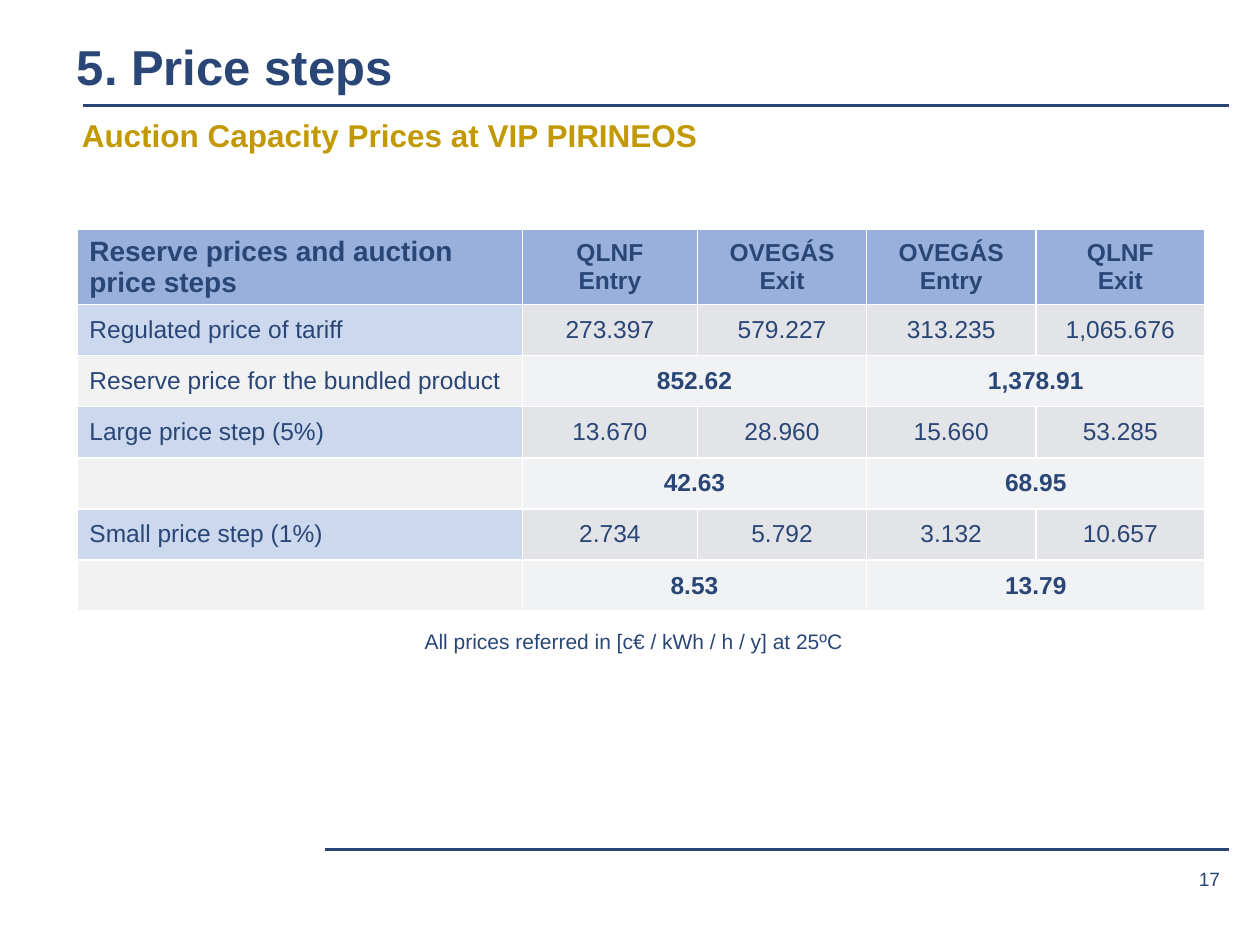
from lxml import etree
from pptx import Presentation
from pptx import util as u
from pptx.dml import color
from pptx.enum import shapes, text
from pptx.oxml import ns

NAVY, GOLD, WHITE = "2A4677", "C29903", "FFFFFF"
LEFT, CENTER = text.PP_ALIGN.LEFT, text.PP_ALIGN.CENTER
RIGHT, JUSTIFY = text.PP_ALIGN.RIGHT, text.PP_ALIGN.JUSTIFY
TOP, MIDDLE = text.MSO_ANCHOR.TOP, text.MSO_ANCHOR.MIDDLE
BOTTOM = text.MSO_ANCHOR.BOTTOM
HEADER = ("98B0DB", "98B0DB")
SPLIT = ("CBD8ED", "E3E4E8")
BUNDLED = ("F2F2F2", "F1F2F4")


def rgb(value):
    return color.RGBColor.from_string(value)


class Deck:
    font = "Arial"
    line_width = u.Pt(1.5)

    def __init__(self, prs):
        self.s = prs.slides.add_slide(prs.slide_layouts[5])

    def fill_text(self, tf, content, size, bold=False, ink=NAVY, align=LEFT):
        tf.text = content
        for p in tf.paragraphs:
            p.alignment = align
            for r in p.runs:
                style = {"name": self.font, "size": u.Pt(size), "bold": bold}
                for key, value in style.items():
                    setattr(r.font, key, value)
                r.font.color.rgb = rgb(ink)

    def frame(self, sp, box, content, size, anchor=TOP, inset=0, wrap=True, **look):
        for key, value in zip(("left", "top", "width", "height"), box):
            setattr(sp, key, u.Cm(value))
        tf = sp.text_frame
        layout = {"word_wrap": wrap, "vertical_anchor": anchor,
                  "auto_size": text.MSO_AUTO_SIZE.NONE,
                  "margin_left": u.Cm(inset), "margin_right": u.Cm(inset),
                  "margin_top": u.Cm(inset / 2), "margin_bottom": u.Cm(inset / 2)}
        for key, value in layout.items():
            setattr(tf, key, value)
        self.fill_text(tf, content, size, **look)

    def title(self, box, content, size):
        self.frame(self.s.shapes.title, box, content, size, anchor=BOTTOM, bold=True)

    def textbox(self, box, content, size, **look):
        sp = self.s.shapes.add_textbox(0, 0, 0, 0)
        self.frame(sp, box, content, size, **look)

    def rule(self, x1, x2, y):
        sp = self.s.shapes.add_connector(
            shapes.MSO_CONNECTOR.STRAIGHT, u.Cm(x1), u.Cm(y), u.Cm(x2), u.Cm(y))
        sp.line.color.rgb = rgb(NAVY)
        sp.line.width = self.line_width
        etree.SubElement(sp._element.spPr, ns.qn("a:effectLst"))

    def borders(self, cell):
        tcPr = cell._tc.get_or_add_tcPr()
        for side in ("lnL", "lnR", "lnT", "lnB"):
            ln = etree.SubElement(tcPr, ns.qn(f"a:{side}"), w=str(u.Pt(1)))
            solid = etree.SubElement(ln, ns.qn("a:solidFill"))
            etree.SubElement(solid, ns.qn("a:srgbClr"), val=WHITE)

    def table(self, left, top, widths, heights, rows):
        table = self.s.shapes.add_table(
            len(rows), len(widths), u.Cm(left), u.Cm(top),
            u.Cm(sum(widths)), u.Cm(sum(heights))).table
        for column, width in zip(table.columns, widths):
            column.width = u.Cm(width)
        for row, height in zip(table.rows, heights):
            row.height = u.Cm(height)
        for i, (fills, label, values) in enumerate(rows):
            span = (len(widths) - 1) // len(values)
            for j in range(len(widths)):
                cell = table.cell(i, j)
                self.borders(cell)
                cell.fill.solid()
                cell.fill.fore_color.rgb = rgb(fills[j > 0])
                cell.vertical_anchor = MIDDLE
            self.fill_text(table.cell(i, 0).text_frame, label,
                           16 if fills is HEADER else 14, bold=fills is HEADER)
            for k, value in enumerate(values):
                j = 1 + k * span
                cell = table.cell(i, j)
                if span > 1:
                    cell.merge(table.cell(i, j + span - 1))
                self.fill_text(cell.text_frame, value, 14,
                               bold=fills is not SPLIT, align=CENTER)


def main():
    prs = Presentation()
    prs.slide_width, prs.slide_height = u.Cm(25.4), u.Cm(19.05)
    deck = Deck(prs)
    deck.rule(1.68, 24.77, 2.13)
    deck.rule(6.55, 24.77, 17.12)
    deck.textbox((22.6, 17.32, 2.0, 0.79), "17", 11, anchor=MIDDLE,
                 wrap=False, align=RIGHT)
    deck.title((1.55, 0.91, 21.56, 1.02), "5. Price steps", 28)
    deck.textbox((1.65, 2.34, 23.14, 13.26), "Auction Capacity Prices at VIP PIRINEOS",
                 18, bold=True, ink=GOLD, align=JUSTIFY)
    rows = [
        (HEADER, "Reserve prices and auction price steps",
         ["QLNF\nEntry", "OVEGÁS\nExit", "OVEGÁS\nEntry", "QLNF\nExit"]),
        (SPLIT, "Regulated price of tariff",
         ["273.397", "579.227", "313.235", "1,065.676"]),
        (BUNDLED, "Reserve price for the bundled product", ["852.62", "1,378.91"]),
        (SPLIT, "Large price step (5%)", ["13.670", "28.960", "15.660", "53.285"]),
        (BUNDLED, "", ["42.63", "68.95"]),
        (SPLIT, "Small price step (1%)", ["2.734", "5.792", "3.132", "10.657"]),
        (BUNDLED, "", ["8.53", "13.79"]),
    ]
    deck.table(1.55, 4.63, [8.98, 3.53] + [3.41] * 3, [1.5] + [1.03] * 6, rows)
    deck.textbox((8.31, 12.55, 12.7, 0.77),
                 "All prices referred in [c€ / kWh / h / y] at 25ºC", 12, inset=0.25)
    prs.save("out.pptx")


if __name__ == "__main__":
    main()
